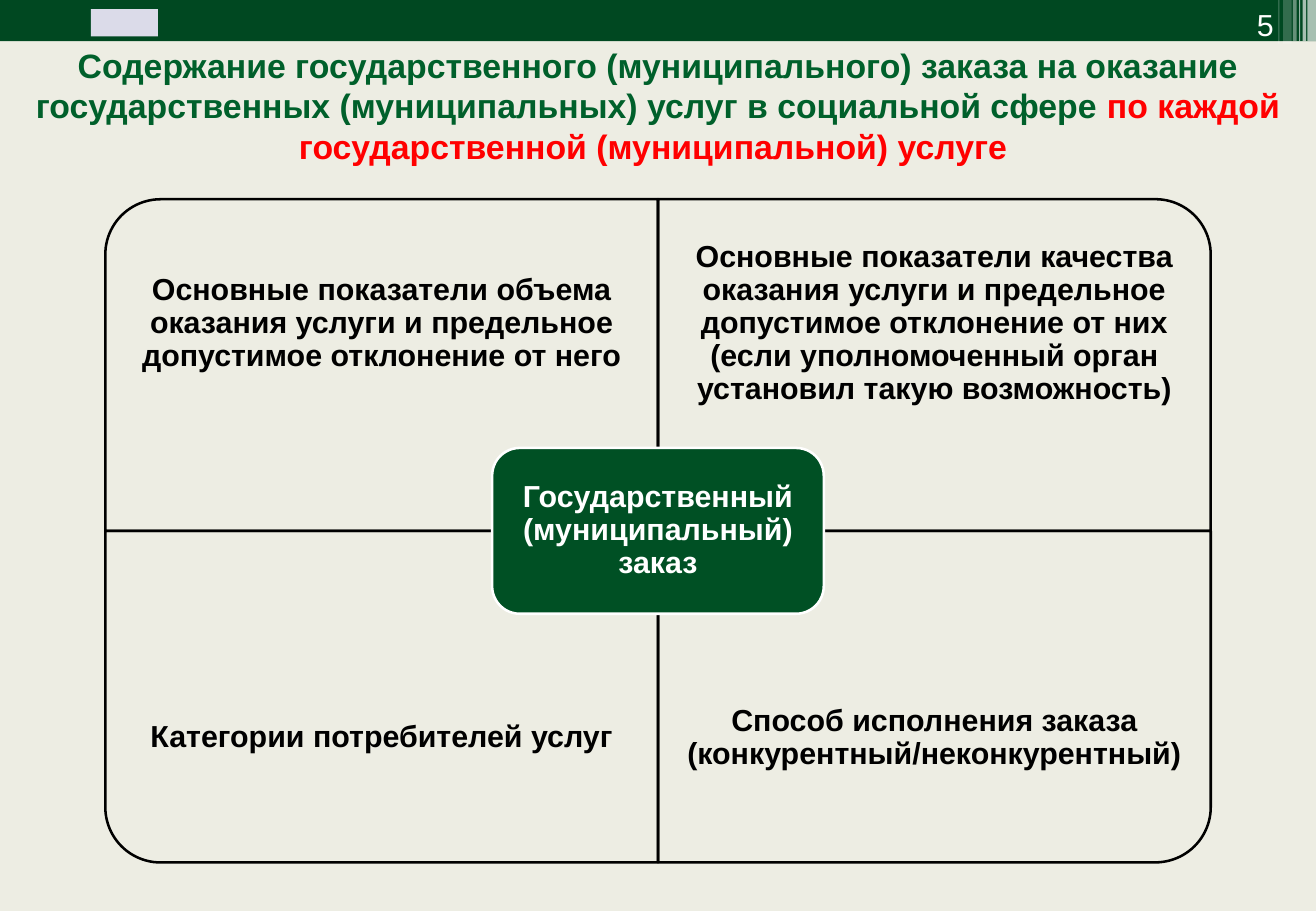
from dataclasses import dataclass

from lxml.etree import SubElement
from pptx import Presentation
from pptx.dml.color import RGBColor as Rgb
from pptx.enum.shapes import MSO_SHAPE as Kind
from pptx.enum.text import MSO_ANCHOR as Anchor, PP_ALIGN as Align
from pptx.oxml.ns import qn
from pptx.util import Inches, Pt


@dataclass(frozen=True)
class Theme:
    font: str = "Arial"
    back: str = "EDEDE3"
    band: str = "004821"
    mark: str = "DBDBE9"
    core: str = "005024"
    title: str = "00602B"
    alert: str = "FF0000"
    ink: str = "000000"
    white: str = "FFFFFF"
    head: int = 20
    body: int = 18
    line: float = 1.5


class Board:
    """Draws on one slide; lengths are percent of its width and height."""
    left, top, col, row = 8, 21.87, 42, 36.4

    def __init__(self, deck, theme):
        self.theme = theme
        self.size = deck.slide_width, deck.slide_height
        self.slide = deck.slides.add_slide(deck.slide_layouts[6])
        fill = self.slide.background.fill
        fill.solid()
        fill.fore_color.rgb = Rgb.from_string(theme.back)

    def grid(self, x, y, w, h):
        """Turn columns and rows into percent of the slide."""
        return (self.left + x * self.col, self.top + y * self.row,
                w * self.col, h * self.row)

    def span(self, box):
        """Turn percent of the slide into lengths."""
        return [round(v * self.size[i % 2] / 100) for i, v in enumerate(box)]

    def shape(self, kind, box, fill=None, line=None, alpha=None, turn=0):
        x, y, w, h = self.span(box)
        if turn % 180:
            x, y, w, h = x + (w - h) // 2, y + (h - w) // 2, h, w
        item = self.slide.shapes.add_shape(kind, x, y, w, h)
        item.shadow.inherit = False
        item.rotation = turn
        if fill:
            item.fill.solid()
            item.fill.fore_color.rgb = Rgb.from_string(fill)
        else:
            item.fill.background()
        if line:
            item.line.color.rgb = Rgb.from_string(line)
            item.line.width = Pt(self.theme.line)
        else:
            item.line.fill.background()
        if alpha:
            tint = item.element.spPr.find(".//" + qn("a:srgbClr"))
            SubElement(tint, qn("a:alpha")).set("val", str(alpha * 1000))
        return item

    def label(self, item, runs, size, bold=True, pad=None, space=None,
              align=Align.CENTER, anchor=Anchor.MIDDLE):
        """Fill a shape with one paragraph of (text, colour) runs."""
        frame = item.text_frame
        look = {"word_wrap": True, "vertical_anchor": anchor}
        if pad:
            look.update({f"margin_{side}": Pt(pad)
                         for side in ("left", "top", "right", "bottom")})
        for key, value in look.items():
            setattr(frame, key, value)
        para = frame.paragraphs[0]
        para.alignment = align
        para.line_spacing = space
        for words, tone in runs:
            run = para.add_run()
            run.text = words
            face = {"name": self.theme.font, "size": Pt(size), "bold": bold}
            for key, value in face.items():
                setattr(run.font, key, value)
            run.font.color.rgb = Rgb.from_string(tone)

    def text(self, box, runs, size, **look):
        item = self.slide.shapes.add_textbox(*self.span(box))
        self.label(item, runs, size, **look)


def header(board):
    theme = board.theme
    board.shape(Kind.RECTANGLE, (0, 0, 100, 4.53), theme.band)
    stripes = [(99.35, 0.65, 4.53, 65), (98.98, 0.28, 4.53, 65),
               (98.71, 0.09, 4.53, 60), (98.25, 0.28, 4.53, 40),
               (97.51, 0.65, 4.8, 20), (97.14, 0.09, 4.8, 30)]
    for x, wide, high, alpha in stripes:
        board.shape(Kind.RECTANGLE, (x, 0, wide, high), theme.white, alpha=alpha)
    board.shape(Kind.RECTANGLE, (6.9, 1, 5.1, 3), theme.mark)
    board.text((89.38, 0, 8.31, 5.33), [("5", theme.white)], theme.body,
               bold=False, align=Align.RIGHT, anchor=Anchor.BOTTOM)
    board.text((0, 6.4, 100, 10.27), [
        ("Содержание государственного (муниципального) заказа на оказание "
         "государственных (муниципальных) услуг в социальной сфере ", theme.title),
        ("по каждой государственной (муниципальной) услуге ", theme.alert),
    ], theme.head)


def matrix(board):
    theme = board.theme
    parts = [
        (0, 0, 270, "Основные показатели объема оказания услуги и предельное "
                    "допустимое отклонение от него"),
        (1, 0, 0, "Основные показатели качества оказания услуги и предельное "
                  "допустимое отклонение от них (если уполномоченный орган "
                  "установил такую возможность)"),
        (0, 1, 180, "Категории потребителей услуг"),
        (1, 1, 90, "Способ исполнения заказа (конкурентный/неконкурентный)"),
    ]
    for x, y, turn, words in parts:
        board.shape(Kind.ROUND_1_RECTANGLE, board.grid(x, y, 1, 1),
                    line=theme.ink, turn=turn)
        board.text(board.grid(x, y * 1.25, 1, 0.75), [(words, theme.ink)],
                   theme.body, pad=10, space=0.9)
    core = board.shape(Kind.ROUNDED_RECTANGLE, board.grid(0.7, 0.75, 0.6, 0.5),
                       theme.core, theme.white)
    board.label(core, [("Государственный (муниципальный) заказ", theme.white)],
                theme.body, pad=5, space=0.9)


def main():
    deck = Presentation()
    deck.slide_width, deck.slide_height = Inches(10.83), Inches(7.5)
    board = Board(deck, Theme())
    header(board)
    matrix(board)
    deck.save("out.pptx")


if __name__ == "__main__":
    main()
